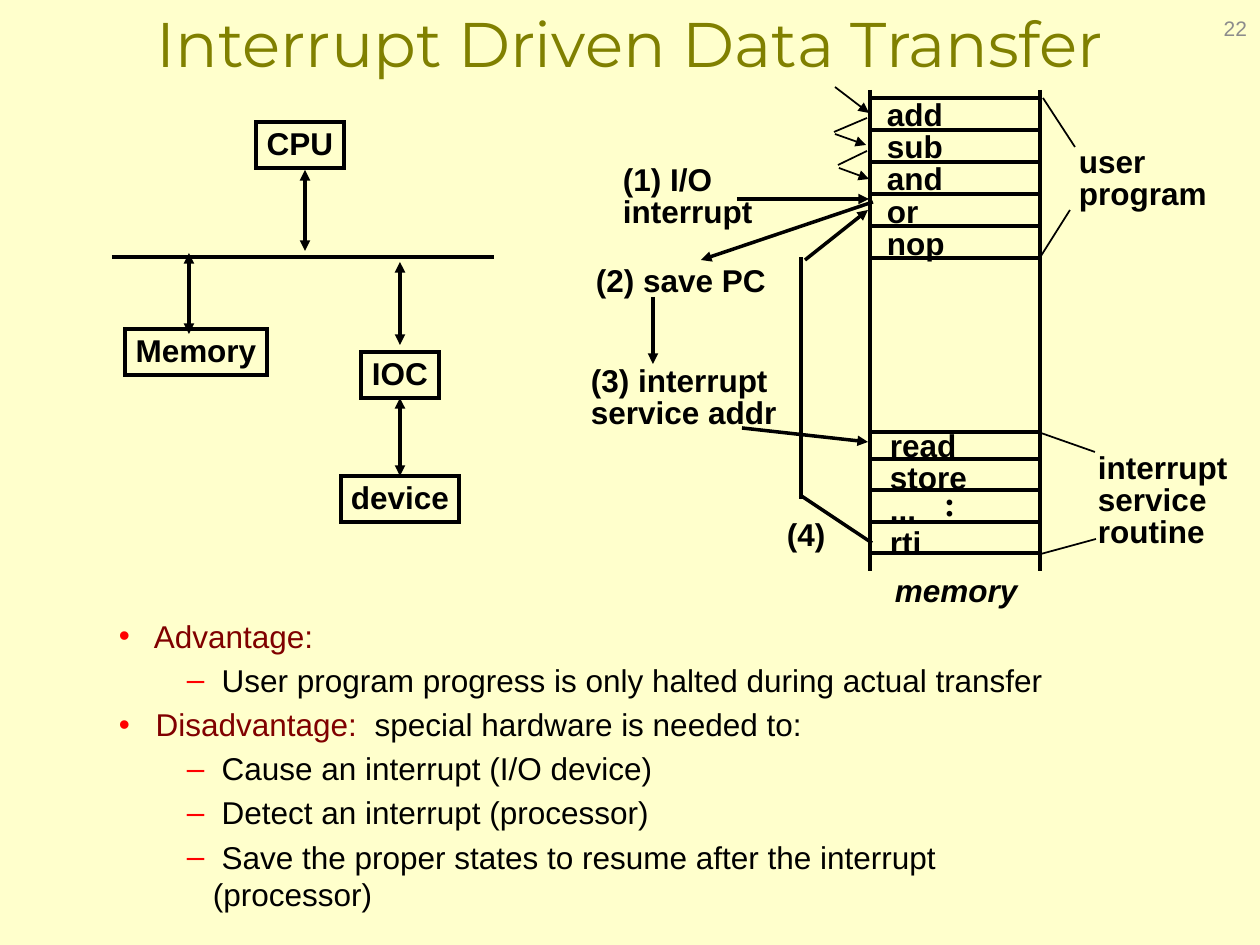
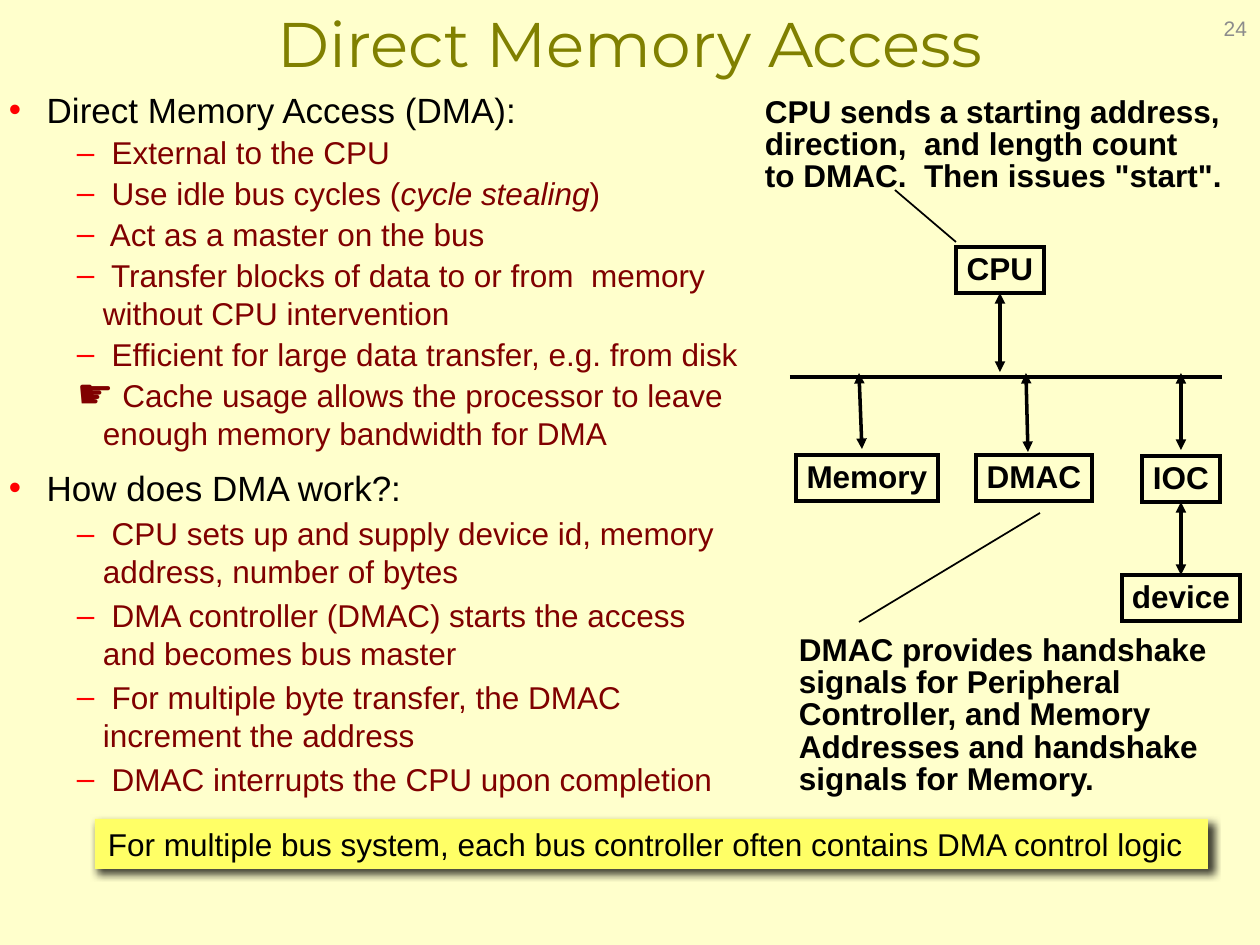
from dataclasses import dataclass

from lxml.etree import SubElement
from pptx import Presentation
from pptx.dml.color import RGBColor
from pptx.enum.shapes import MSO_CONNECTOR as Connector, MSO_SHAPE as Preset
from pptx.enum.text import MSO_ANCHOR as Anchor, MSO_AUTO_SIZE as AutoSize, PP_ALIGN as Align
from pptx.oxml.ns import qn
from pptx.util import Inches, Pt

PX = 7257


@dataclass(frozen=True)
class Theme:
    background: str = "FFFFCC"
    ink: str = "000000"
    title: str = "808000"
    accent: str = "800000"
    bullet: str = "FF0000"
    banner: str = "FFFF66"
    number: str = "8C8C8C"
    font: str = "Arial"
    title_font: str = "Montserrat"
    symbol_font: str = "Times New Roman"
    title_size: int = 36
    heading_size: int = 20
    text_size: int = 18
    number_size: int = 12


theme = Theme()


def write(shape, text, *, font=theme.font, size=theme.text_size, color=theme.ink,
          bold=False, italic=False, align=Align.LEFT, spacing=1.0, before=0,
          bullet=None, join=False, anchor=Anchor.TOP, wrap=True, fit=True, inset=(9, 4)):
    frame = shape.text_frame
    frame.word_wrap = wrap
    frame.auto_size = AutoSize.SHAPE_TO_FIT_TEXT if fit else AutoSize.NONE
    frame.vertical_anchor = anchor
    frame.margin_left = frame.margin_right = inset[0] * PX
    frame.margin_top = frame.margin_bottom = inset[1] * PX
    for line in text.split("\n"):
        paragraph = frame.paragraphs[-1]
        if not join:
            if frame.text:
                paragraph = frame.add_paragraph()
            paragraph.alignment = align
            paragraph.line_spacing = spacing
            paragraph.space_before = Pt(before * size)
        if bullet:
            character, bullet_color, level, left, hanging, percent = bullet
            paragraph.level = level
            properties = paragraph._p.get_or_add_pPr()
            properties.set("marL", str(left * PX))
            properties.set("indent", str(-hanging * PX))
            tint = SubElement(properties, qn("a:buClr"))
            SubElement(tint, qn("a:srgbClr"), val=bullet_color)
            SubElement(properties, qn("a:buSzPct"), val=str(percent * 1000))
            SubElement(properties, qn("a:buChar"), char=character)
        run = paragraph.add_run()
        run.text = line
        run.font.name = font
        run.font.size = Pt(size)
        run.font.bold = bold
        run.font.italic = italic
        run.font.color.rgb = RGBColor.from_string(color)


def add_line(slide, *ends, width=2, heads=()):
    connector = slide.shapes.add_connector(Connector.STRAIGHT, *[end * PX for end in ends])
    connector.line.color.rgb = RGBColor.from_string(theme.ink)
    connector.line.width = Pt(width)
    for head in heads:
        SubElement(connector.line._get_or_add_ln(), qn(f"a:{head}End"), type="triangle")
    SubElement(connector._element.spPr, qn("a:effectLst"))
    return connector


TO = ("tail",)
BOTH = ("head", "tail")

presentation = Presentation()
presentation.slide_width = Inches(10)
presentation.slide_height = Inches(7.5)
background = presentation.slide_master.background.fill
background.solid()
background.fore_color.rgb = RGBColor.from_string(theme.background)

slides = []
for layout, title, number in [
    (1, "Interrupt Driven Data Transfer", "22"),
    (3, "Direct Memory Access", "24"),
]:
    slide = presentation.slides.add_slide(presentation.slide_layouts[layout])
    heading = slide.shapes.title
    heading.left, heading.top, heading.width, heading.height = 0, 0, 1260 * PX, 83 * PX
    write(heading, title, font=theme.title_font, size=theme.title_size,
          color=theme.title, align=Align.CENTER)
    corner = slide.shapes.add_textbox(*[length * PX for length in (966, 3, 294, 50)])
    write(corner, number, size=theme.number_size, color=theme.number, align=Align.RIGHT,
          anchor=Anchor.MIDDLE, fit=False, inset=(13, 6))
    slides.append(slide)
interrupt_slide, dma_slide = slides

POINT = ("•", theme.bullet, 0, 28, 28, 100)
DASH = ("–", theme.bullet, 1, 94, 26, 100)
HAND = ("☛", theme.accent, 1, 94, 26, 130)
topic = dict(bullet=POINT, color=theme.accent, before=0.2)
detail = dict(bullet=DASH, before=0.2)
question = dict(bullet=POINT, size=theme.heading_size, before=0.2)
feature = dict(bullet=DASH, color=theme.accent, before=0.1)
step = dict(bullet=DASH, color=theme.accent, before=0.2)

for body, place, items in [
    (interrupt_slide.placeholders[1], (110, 613, 978, 310), [
        (" Advantage:", topic),
        (" User program progress is only halted during actual transfer", detail),
        (" Disadvantage:", topic),
        ("  special hardware is needed to:", dict(join=True)),
        (" Cause an interrupt (I/O device)", detail),
        (" Detect an interrupt (processor)", detail),
        (" Save the proper states to resume after the interrupt (processor)", detail),
    ]),
    (dma_slide.placeholders[1], (0, 84, 777, 374), [
        (" Direct Memory Access (DMA):", question),
        (" External to the CPU", feature),
        (" Use idle bus cycles (", feature),
        ("cycle stealing", dict(join=True, italic=True, color=theme.accent)),
        (")", dict(join=True, color=theme.accent)),
        (" Act as a master on the bus", feature),
        (" Transfer blocks of data to or from  memory without CPU intervention", feature),
        (" Efficient for large data transfer, e.g. from disk", feature),
        (" Cache usage allows the processor to leave enough memory bandwidth for DMA",
         feature | dict(bullet=HAND)),
    ]),
    (dma_slide.placeholders[2], (0, 462, 735, 344), [
        (" How does DMA work?:", question),
        (" CPU sets up and supply device id, memory address, number of bytes", step),
        (" DMA controller (DMAC) starts the access and becomes bus master", step),
        (" For multiple byte transfer, the DMAC increment the address", step),
        (" DMAC interrupts the CPU upon completion", step),
    ]),
]:
    body.left, body.top, body.width, body.height = [length * PX for length in place]
    for text, style in items:
        write(body, text, **style)

box_widths = {"CPU": 88, "Memory": 142, "DMAC": 116, "IOC": 78, "device": 118}
box_height = 46
for slide, boxes, bus, links in [
    (interrupt_slide,
     {"CPU": (300, 122), "Memory": (196, 329), "IOC": (400, 352), "device": (400, 476)},
     (112, 257, 494, 257),
     [(305, 170, 305, 251), (189, 253, 189, 334), (400, 262, 400, 345)]),
    (dma_slide,
     {"CPU": (1000, 247), "Memory": (867, 455), "DMAC": (1034, 455),
      "IOC": (1181, 456), "device": (1181, 575)},
     (790, 377, 1222, 377),
     [(1000, 293, 1000, 372), (859, 373, 862, 449), (1026, 373, 1028, 452),
      (1181, 373, 1181, 450)]),
]:
    units = {}
    for name, (center, top) in boxes.items():
        width = box_widths[name]
        place = (center - width // 2, top, width, box_height)
        unit = slide.shapes.add_shape(Preset.RECTANGLE, *[length * PX for length in place])
        unit.shadow.inherit = False
        unit.fill.background()
        unit.line.color.rgb = RGBColor.from_string(theme.ink)
        unit.line.width = Pt(2)
        SubElement(unit.line._get_or_add_ln(), qn("a:miter"), lim="800000")
        write(unit, name, bold=True, align=Align.CENTER, spacing=0.92,
              anchor=Anchor.MIDDLE, wrap=False)
        units[name] = unit
    add_line(slide, *bus)
    connectors = [add_line(slide, *link, heads=BOTH) for link in links]
    if slide is dma_slide:
        connectors[0].begin_connect(units["CPU"], 2)
    device_link = add_line(slide, 0, 0, 0, 0, heads=BOTH)
    device_link.begin_connect(units["IOC"], 2)
    device_link.end_connect(units["device"], 0)

for memory_side in (870, 1040):
    add_line(interrupt_slide, memory_side, 90, memory_side, 571)
program_rows = [98 + 32 * row for row in range(6)]
routine_rows = [432, 459, 490, 522, 553]
for row_top in program_rows + routine_rows:
    add_line(interrupt_slide, 872, row_top, 1038, row_top)

for slide, width, heads, lines in [
    (interrupt_slide, 1, (), [
        (1043, 98, 1075, 147), (1041, 256, 1070, 210), (867, 118, 834, 132),
        (867, 151, 838, 165), (1041, 433, 1095, 452), (1041, 554, 1096, 539)]),
    (interrupt_slide, 1, TO, [
        (835, 87, 869, 113), (835, 134, 866, 145), (839, 168, 869, 179)]),
    (interrupt_slide, 2, TO, [
        (737, 199, 869, 199), (873, 202, 701, 260), (653, 297, 653, 364),
        (742, 428, 868, 442), (805, 260, 868, 210)]),
    (interrupt_slide, 2, (), [(872, 543, 800, 495), (801, 499, 801, 257)]),
    (dma_slide, 1, (), [(956, 242, 895, 190), (1040, 513, 859, 622)]),
]:
    for ends in lines:
        add_line(slide, *ends, width=width, heads=heads)

for slide, place, text, style in [
    (interrupt_slide, (878, 97, 100, 168), "add\nsub\nand\nor\nnop", {}),
    (interrupt_slide, (881, 428, 120, 136), "read\nstore\n...\nrti", {}),
    (interrupt_slide, (886, 573, 170, 39), "memory", dict(italic=True)),
    (interrupt_slide, (1070, 144, 175, 72), "user\nprogram", {}),
    (interrupt_slide, (614, 162, 175, 72), "(1) I/O\ninterrupt", {}),
    (interrupt_slide, (587, 263, 215, 39), "(2) save PC", {}),
    (interrupt_slide, (582, 363, 230, 72), "(3) interrupt\nservice addr", {}),
    (interrupt_slide, (1089, 450, 171, 103), "interrupt\nservice\nroutine", {}),
    (interrupt_slide, (778, 517, 80, 39), "(4)", {}),
    (interrupt_slide, (931, 476, 60, 54), ":",
     dict(font=theme.symbol_font, size=theme.heading_size, spacing=1.0, inset=(13, 6))),
    (dma_slide, (756, 94, 500, 103),
     "CPU sends a starting address,\ndirection,  and length count\n"
     "to DMAC.  Then issues \"start\".", {}),
    (dma_slide, (790, 632, 460, 168),
     "DMAC provides handshake\nsignals for Peripheral\nController, and Memory\n"
     "Addresses and handshake\nsignals for Memory.", {}),
]:
    label = slide.shapes.add_textbox(*[length * PX for length in place])
    write(label, text, **(dict(bold=True, spacing=0.85) | style))

banner = dma_slide.shapes.add_shape(
    Preset.RECTANGLE, *[length * PX for length in (95, 819, 1113, 50)])
banner.shadow.inherit = False
banner.fill.solid()
banner.fill.fore_color.rgb = RGBColor.from_string(theme.banner)
banner.line.fill.background()
effects = banner._element.spPr.find(qn("a:effectLst"))
shadow = SubElement(effects, qn("a:outerShdw"), blurRad=str(Pt(5)), dist=str(Pt(3)),
                    dir="2700000", algn="tl", rotWithShape="0")
shade = SubElement(shadow, qn("a:srgbClr"), val=theme.ink)
SubElement(shade, qn("a:alpha"), val="75000")
write(banner, "For multiple bus system, each bus controller often contains DMA control logic",
      inset=(13, 6))

presentation.save("out.pptx")
